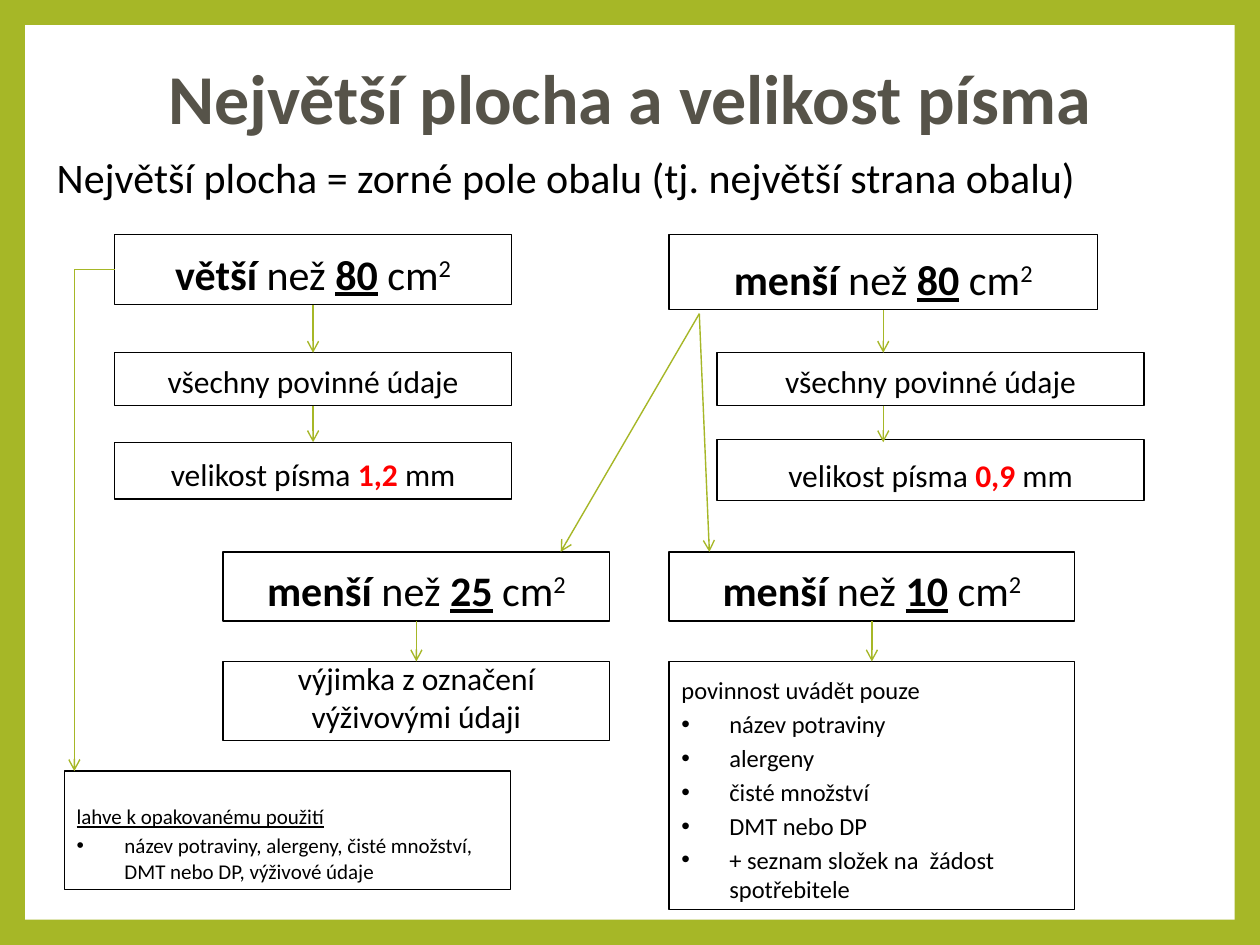
from dataclasses import dataclass
from typing import Optional

from lxml.etree import SubElement as Sub
from pptx import Presentation
from pptx.dml.color import RGBColor as Rgb
from pptx.enum.shapes import MSO_CONNECTOR as Conn, MSO_SHAPE as Form
from pptx.enum.text import MSO_ANCHOR as Anchor, PP_ALIGN as Align
from pptx.oxml.ns import qn
from pptx.util import Inches, Pt

GREEN = Rgb(0xA6, 0xB7, 0x27)
WHITE = Rgb(0xFF, 0xFF, 0xFF)
BLACK = Rgb(0, 0, 0)
GREY = Rgb(0x56, 0x53, 0x49)
RED = Rgb(0xFF, 0, 0)
FONT = "Calibri"
COLS, ROWS = 100, 75
WIDE, HIGH = Inches(10), Inches(7.5)
HANG = Inches(0.38)
GAP = 0.18


@dataclass(frozen=True)
class Area:
    col: float
    row: float
    cols: float
    rows: float

    def span(self) -> tuple:
        return (across(self.col), down(self.row), across(self.cols), down(self.rows))


@dataclass(frozen=True)
class Run:
    text: str
    bold: bool = False
    under: bool = False
    sup: bool = False
    color: Rgb = BLACK


@dataclass(frozen=True)
class Line:
    runs: tuple
    dot: bool = False


@dataclass(frozen=True)
class Card:
    area: Area
    lines: tuple
    size: int = 18
    align: Align = Align.CENTER


@dataclass(frozen=True)
class Link:
    start: tuple
    end: tuple
    head: Optional[str] = None
    foot: Optional[str] = None


def across(cols: float) -> int:
    return round(WIDE * cols / COLS)


def down(rows: float) -> int:
    return round(HIGH * rows / ROWS)


def limit(word: str, area: str) -> tuple:
    return (Line((Run(word, bold=True), Run(" než "), Run(area, bold=True, under=True),
                  Run(" cm"), Run("2", sup=True))),)


def height(value: str) -> tuple:
    return (Line((Run("velikost písma "), Run(value + " ", bold=True, color=RED), Run("mm"))),)


def plain(text: str, dot: bool = False, under: bool = False) -> Line:
    return Line((Run(text, under=under),), dot)


def write(para, text: str, *, size: int, bold: bool = False, under: bool = False,
          sup: bool = False, color: Rgb = BLACK) -> None:
    run = para.add_run()
    run.text = text
    font = run.font
    font.name, font.size, font.bold, font.underline = FONT, Pt(size), bold, under
    font.color.rgb = color
    if sup:
        run._r.get_or_add_rPr().set("baseline", "30000")


def bullet(para) -> None:
    props = para._p.get_or_add_pPr()
    props.set("marL", str(HANG))
    props.set("indent", str(-HANG))
    Sub(props, qn("a:buFont"), typeface="Arial")
    Sub(props, qn("a:buChar"), char="•")


def draw_card(slide, card: Card):
    box = slide.shapes.add_shape(Form.RECTANGLE, *card.area.span())
    box.shadow.inherit = False
    box.fill.background()
    box.line.color.rgb, box.line.width = BLACK, Pt(0.75)
    frame = box.text_frame
    frame.word_wrap, frame.vertical_anchor = True, Anchor.BOTTOM
    for spot, line in enumerate(card.lines):
        para = frame.add_paragraph() if spot else frame.paragraphs[0]
        para.alignment, para.space_before = card.align, Pt(card.size * GAP)
        if line.dot:
            bullet(para)
        for run in line.runs:
            write(para, run.text, size=card.size, bold=run.bold, under=run.under,
                  sup=run.sup, color=run.color)
    return box


def draw_link(slide, link: Link, boxes: dict, kind: Conn = Conn.STRAIGHT):
    wire = slide.shapes.add_connector(kind, across(link.start[0]), down(link.start[1]),
                                      across(link.end[0]), down(link.end[1]))
    if link.head:
        wire.begin_connect(boxes[link.head], 2)
    if link.foot:
        wire.end_connect(boxes[link.foot], 0)
    wire.line.color.rgb, wire.line.width = GREEN, Pt(0.79)
    Sub(wire.line._get_or_add_ln(), qn("a:tailEnd"), type="arrow")
    Sub(wire._element.spPr, qn("a:effectLst"))
    return wire


def draw_title(slide) -> None:
    title = slide.shapes.title
    title.left, title.top, title.width, title.height = Area(3.5, 11.5, 94.5, 5.5).span()
    title.text_frame.vertical_anchor = Anchor.MIDDLE
    para = title.text_frame.paragraphs[0]
    para.alignment, para.line_spacing = Align.LEFT, 0.9
    write(para, "Největší plocha = zorné pole obalu (tj. největší strana obalu)", size=24)


def draw_head(slide) -> None:
    frame = slide.shapes.add_textbox(*Area(5, 1.3, 90, 10.2).span()).text_frame
    frame.word_wrap, frame.vertical_anchor = True, Anchor.BOTTOM
    para = frame.paragraphs[0]
    para.alignment, para.line_spacing = Align.CENTER, Pt(58)
    write(para, "Největší plocha a velikost písma", size=40, bold=True, color=GREY)


DATA = (plain("všechny povinné údaje"),)
ITEMS = ("název potraviny", "alergeny", "čisté množství", "DMT nebo DP",
         "+ seznam složek na  žádost spotřebitele")
CARDS = {
    "large": Card(Area(9.1, 18.6, 31.5, 5.6), limit("větší", "80"), 24),
    "small": Card(Area(53.1, 18.6, 34, 6), limit("menší", "80"), 24),
    "large data": Card(Area(9.1, 28, 31.5, 4.2), DATA),
    "large type": Card(Area(9.1, 35.1, 31.5, 4.5), height("1,2")),
    "small data": Card(Area(56.9, 28, 33.9, 4.2), DATA),
    "small type": Card(Area(56.9, 34.9, 33.9, 4.8), height("0,9")),
    "under 25": Card(Area(17.7, 43.8, 30.7, 5.5), limit("menší", "25"), 24),
    "under 10": Card(Area(53.1, 43.8, 32.2, 5.5), limit("menší", "10"), 24),
    "exempt": Card(Area(17.7, 52.5, 30.7, 6.3), (plain("výjimka z označení výživovými údaji"),)),
    "only": Card(Area(53.1, 52.5, 32.2, 19.7),
                 (plain("povinnost uvádět pouze"), *(plain(item, dot=True) for item in ITEMS)),
                 14, Align.LEFT),
    "bottles": Card(Area(5.1, 61.2, 35.4, 9.4),
                    (plain("lahve k opakovanému použití", under=True),
                     plain("název potraviny, alergeny, čisté množství, "
                           "DMT nebo DP, výživové údaje", dot=True)),
                    12, Align.LEFT),
}
LINKS = (
    Link((55.5, 24.9), (44.5, 43.8)),
    Link((55.5, 24.9), (56.3, 43.8)),
    Link((24.8, 24.2), (24.8, 28), "large", "large data"),
    Link((24.8, 32.2), (24.8, 35.1), "large data", "large type"),
    Link((70.1, 24.6), (70.1, 28), "small"),
    Link((70.1, 32.2), (70.1, 35.1)),
    Link((69.2, 49.3), (69.2, 52.5), "under 10", "only"),
    Link((33.1, 49.3), (33.1, 52.5), "under 25", "exempt"),
)
BEND = Link((9.1, 21.4), (5.9, 61.2))


def main() -> None:
    deck = Presentation()
    deck.slide_width, deck.slide_height = WIDE, HIGH
    slide = deck.slides.add_slide(deck.slide_layouts[5])
    back = slide.background.fill
    back.solid()
    back.fore_color.rgb = GREEN
    panel = slide.shapes.add_shape(Form.RECTANGLE, *Area(2, 2, 96, 71).span())
    panel.shadow.inherit = False
    panel.fill.solid()
    panel.fill.fore_color.rgb = WHITE
    panel.line.fill.background()
    tree = slide.shapes._spTree
    tree.remove(panel._element)
    tree.insert(2, panel._element)
    draw_title(slide)
    draw_head(slide)
    boxes = {name: draw_card(slide, card) for name, card in CARDS.items()}
    for link in LINKS:
        draw_link(slide, link, boxes)
    bend = draw_link(slide, BEND, boxes, Conn.ELBOW)
    bend._element.spPr.find(qn("a:prstGeom")).set("prst", "bentConnector2")
    deck.save("out.pptx")


if __name__ == "__main__":
    main()
